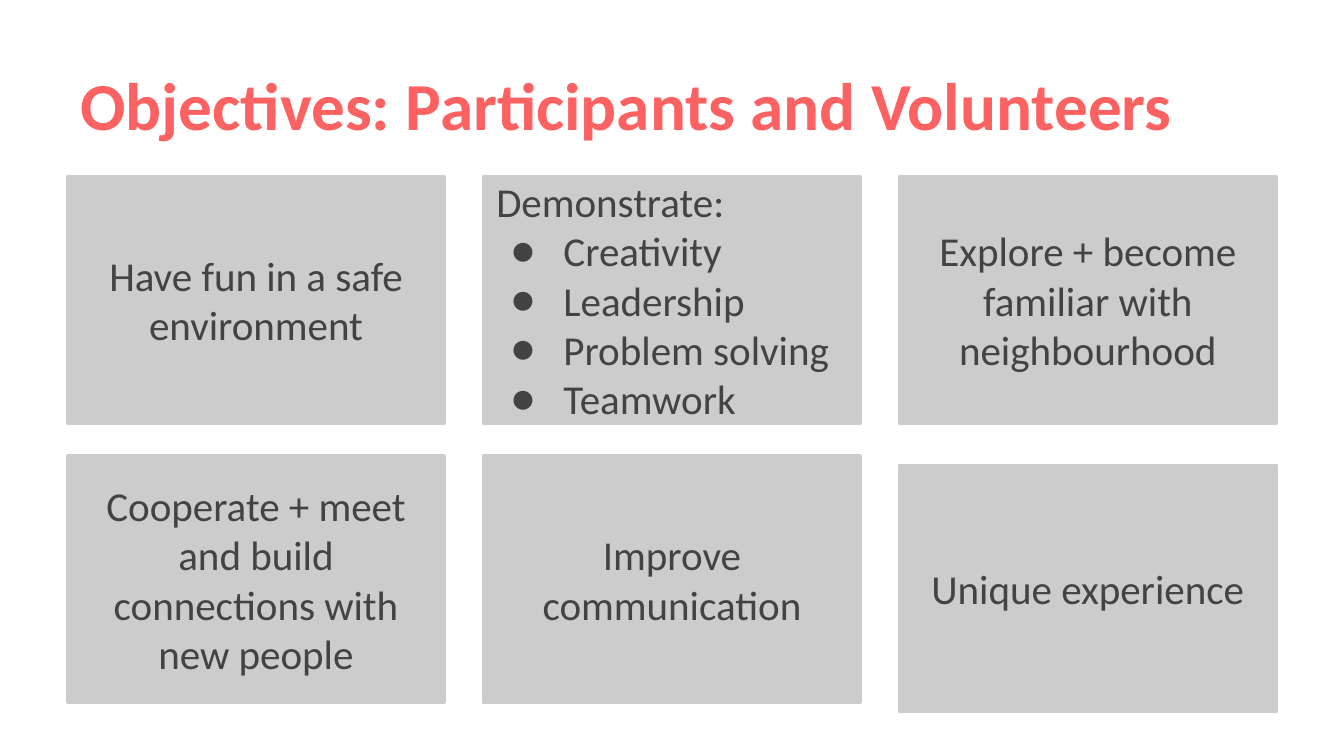
"""Builds a slide with six objectives for participants and volunteers."""
from dataclasses import dataclass

from lxml import etree
from pptx import Presentation
from pptx.dml.color import RGBColor
from pptx.enum.shapes import MSO_SHAPE
from pptx.enum.text import MSO_ANCHOR, PP_ALIGN
from pptx.oxml.ns import qn
from pptx.util import Cm, Pt

RECTANGLE = MSO_SHAPE.RECTANGLE
MIDDLE, BOTTOM = MSO_ANCHOR.MIDDLE, MSO_ANCHOR.BOTTOM
LEFT, CENTER = PP_ALIGN.LEFT, PP_ALIGN.CENTER


@dataclass(frozen=True)
class Theme:
    font: str = "Calibri"
    title: RGBColor = RGBColor(0xFC, 0x62, 0x62)
    text: RGBColor = RGBColor(0x43, 0x43, 0x43)
    card: RGBColor = RGBColor(0xCC, 0xCC, 0xCC)
    title_size: Pt = Pt(36)
    text_size: Pt = Pt(22)
    outline: Pt = Pt(1.5)


THEME = Theme()


def write(box, lines, anchor, align, size, color, bold=False):
    frame = box.text_frame
    frame.word_wrap = True
    frame.vertical_anchor = anchor
    frame.margin_left = frame.margin_right = Cm(0.25)
    frame.margin_top = frame.margin_bottom = Cm(0.25)
    for index, line in enumerate(lines):
        para = frame.add_paragraph() if index else frame.paragraphs[0]
        para.alignment = align
        span = para.add_run()
        span.text = line
        span.font.name = THEME.font
        span.font.size = size
        span.font.bold = bold
        span.font.color.rgb = color
    return frame


def add_bullet(para):
    properties = para._p.get_or_add_pPr()
    properties.set("marL", str(Cm(1.27)))
    properties.set("indent", str(Cm(-1)))
    color = etree.SubElement(properties, qn("a:buClr"))
    etree.SubElement(color, qn("a:srgbClr"), val=str(THEME.text))
    etree.SubElement(properties, qn("a:buFont"), typeface=THEME.font)
    etree.SubElement(properties, qn("a:buChar"), char="●")


deck = Presentation()
deck.slide_width, deck.slide_height = Cm(25.4), Cm(14.29)
page = deck.slides.add_slide(deck.slide_layouts[6])

title = page.shapes.add_textbox(Cm(1.27), Cm(0.58), Cm(22.86), Cm(2.39))
write(title, ["Objectives: Participants and Volunteers"], BOTTOM, LEFT,
      THEME.title_size, THEME.title, bold=True)

columns = [
    [(3.33, ["Have fun in a safe environment"]),
     (8.61, ["Cooperate + meet and build connections with new people"])],
    [(3.33, ["Demonstrate:", "Creativity", "Leadership", "Problem solving", "Teamwork"]),
     (8.61, ["Improve communication"])],
    [(3.33, ["Explore + become familiar with neighbourhood"]),
     (8.79, ["Unique experience"])],
]

for column, cards in enumerate(columns):
    for top, lines in cards:
        card = page.shapes.add_shape(
            RECTANGLE, Cm(1.27 + 7.86 * column), Cm(top), Cm(7.14), Cm(4.67))
        card.shadow.inherit = False
        card.fill.solid()
        card.fill.fore_color.rgb = THEME.card
        card.line.color.rgb = THEME.card
        card.line.width = THEME.outline
        align = LEFT if len(lines) > 1 else CENTER
        frame = write(card, lines, MIDDLE, align, THEME.text_size, THEME.text)
        for para in frame.paragraphs[1:]:
            add_bullet(para)

deck.save("out.pptx")
